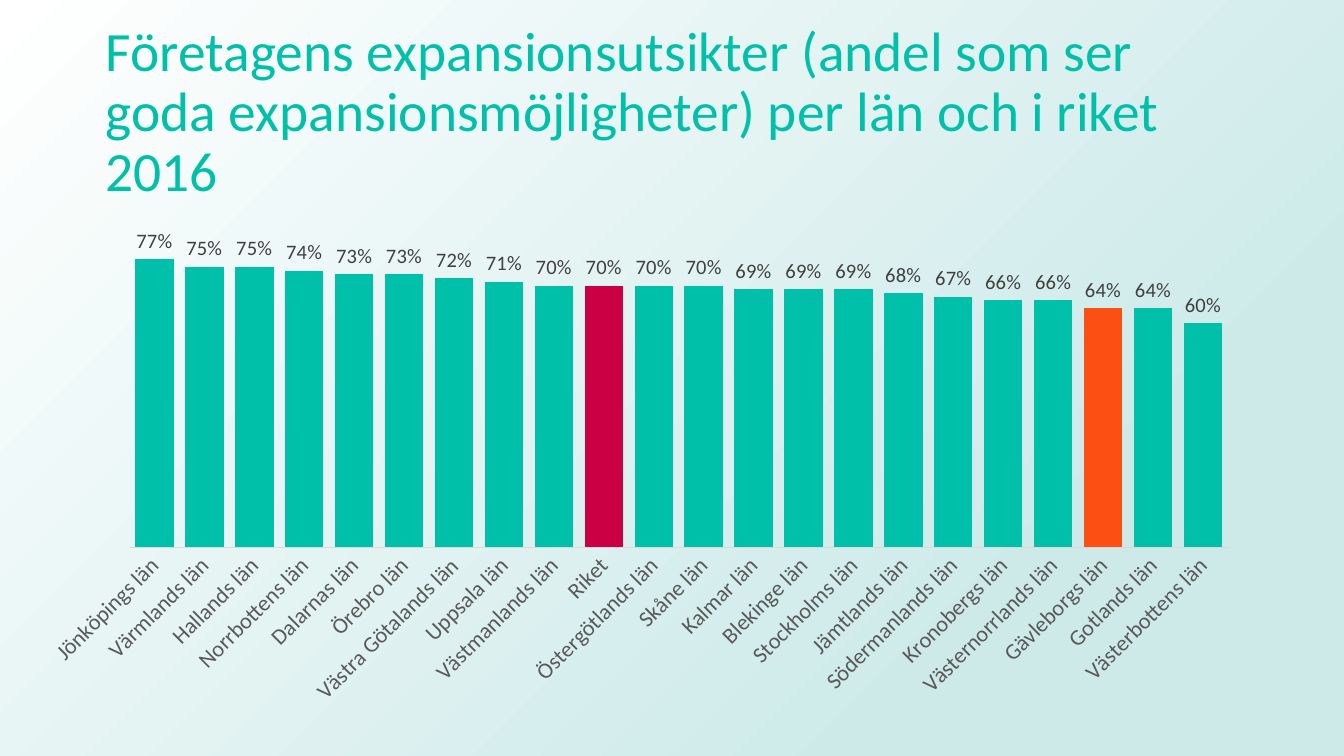
"""Build a slide with a column chart of expansion prospects per Swedish county."""
from pptx import Presentation
from pptx.chart.data import CategoryChartData
from pptx.dml.color import RGBColor
from pptx.enum.chart import XL_CHART_TYPE as ChartType, XL_LABEL_POSITION as LabelPosition
from pptx.enum.chart import XL_TICK_MARK as TickMark
from pptx.enum.shapes import MSO_SHAPE as Shape
from pptx.enum.text import MSO_ANCHOR as Anchor, MSO_AUTO_SIZE as AutoSize, PP_ALIGN as Align
from pptx.oxml import parse_xml
from pptx.oxml.ns import nsdecls
from pptx.util import Cm, Pt

TITLE = "Företagens expansionsutsikter (andel som ser goda expansionsmöjligheter) per län och i riket 2016"
FONT = "Calibri"
TEAL = "00C0A9"
HIGHLIGHTS = {"Riket": "CB0044", "Gävleborgs län": "FB4F14"}
SHARES = [
    ("Jönköpings län", 0.77), ("Värmlands län", 0.75), ("Hallands län", 0.75),
    ("Norrbottens län", 0.74), ("Dalarnas län", 0.73), ("Örebro län", 0.73),
    ("Västra Götalands län", 0.72), ("Uppsala län", 0.71), ("Västmanlands län", 0.70),
    ("Riket", 0.70), ("Östergötlands län", 0.70), ("Skåne län", 0.70),
    ("Kalmar län", 0.69), ("Blekinge län", 0.69), ("Stockholms län", 0.69),
    ("Jämtlands län", 0.68), ("Södermanlands län", 0.67), ("Kronobergs län", 0.66),
    ("Västernorrlands län", 0.66), ("Gävleborgs län", 0.64), ("Gotlands län", 0.64),
    ("Västerbottens län", 0.60),
]
GRADIENT = f"""<a:gradFill {nsdecls('a')} rotWithShape="1"><a:gsLst>
<a:gs pos="23000"><a:srgbClr val="CDEAE9"/></a:gs><a:gs pos="100000"><a:srgbClr val="FFFFFF"/></a:gs>
</a:gsLst><a:path path="circle"><a:fillToRect l="100000" t="100000"/></a:path></a:gradFill>"""
PLOT_LAYOUT = f"""<c:layout {nsdecls('c')}><c:manualLayout><c:layoutTarget val="inner"/>
<c:xMode val="edge"/><c:yMode val="edge"/><c:x val="0.085"/><c:y val="0.018"/>
<c:w val="0.896"/><c:h val="0.656"/></c:manualLayout></c:layout>"""


def paint(fill, color):
    fill.solid()
    fill.fore_color.rgb = RGBColor.from_string(color)


def style(font, size, color):
    font.name, font.size, font.bold = FONT, Pt(size), False
    font.color.rgb = RGBColor.from_string(color)


def add_backdrop(page, deck):
    backdrop = page.shapes.add_shape(Shape.RECTANGLE, 0, 0, deck.slide_width, deck.slide_height)
    backdrop.shadow.inherit = False
    backdrop.line.fill.background()
    paint(backdrop.fill, "FFFFFF")
    solid = backdrop._element.spPr.find("{*}solidFill")
    solid.getparent().replace(solid, parse_xml(GRADIENT))
    page.shapes._spTree.insert(2, backdrop._element)


def fill_title(title):
    title.left, title.top, title.width, title.height = Cm(1.74), Cm(0.76), Cm(21.9), Cm(2.77)
    frame = title.text_frame
    frame.word_wrap, frame.auto_size, frame.vertical_anchor = True, AutoSize.NONE, Anchor.MIDDLE
    para = frame.paragraphs[0]
    para.alignment, para.line_spacing = Align.LEFT, 0.9
    span = para.add_run()
    span.text = TITLE
    style(span.font, 29.7, TEAL)


def add_share_chart(page):
    data = CategoryChartData(number_format="0%")
    data.categories = [county for county, _ in SHARES]
    data.add_series("Series 1", [share for _, share in SHARES])
    chart = page.shapes.add_chart(ChartType.COLUMN_CLUSTERED, Cm(0.48), Cm(3.81), Cm(23.17), Cm(9.7), data).chart
    chart.has_legend = chart.has_title = False
    style(chart.font, 10, "000000")

    values = chart.value_axis
    values.minimum_scale, values.maximum_scale = 0, 0.9
    values.has_major_gridlines = values.visible = False
    values.tick_labels.number_format = "0%"
    values.tick_labels.number_format_is_linked = False

    counties = chart.category_axis
    counties.major_tick_mark = counties.minor_tick_mark = TickMark.NONE
    style(counties.tick_labels.font, 12, "595959")
    counties._element.txPr.bodyPr.set("rot", "-2700000")
    paint(counties.format.line.fill, "D9D9D9")
    counties.format.line.width = Pt(0.75)

    plot = chart.plots[0]
    plot.gap_width, plot.vary_by_categories = 30, False
    bars = plot.series[0]
    paint(bars.format.fill, TEAL)
    for index, (county, _) in enumerate(SHARES):
        if county in HIGHLIGHTS:
            paint(bars.points[index].format.fill, HIGHLIGHTS[county])
    labels = bars.data_labels
    labels.show_value, labels.position = True, LabelPosition.OUTSIDE_END
    labels.number_format, labels.number_format_is_linked = "0%", False
    style(labels.font, 11, "404040")

    area = chart._chartSpace.chart.plotArea
    for layout in area.findall("{*}layout"):
        area.remove(layout)
    area.insert(0, parse_xml(PLOT_LAYOUT))


def main():
    deck = Presentation()
    deck.slide_width, deck.slide_height = Cm(25.4), Cm(14.29)
    page = deck.slides.add_slide(deck.slide_layouts[5])
    add_backdrop(page, deck)
    fill_title(page.shapes.title)
    add_share_chart(page)
    deck.save("out.pptx")


if __name__ == "__main__":
    main()
